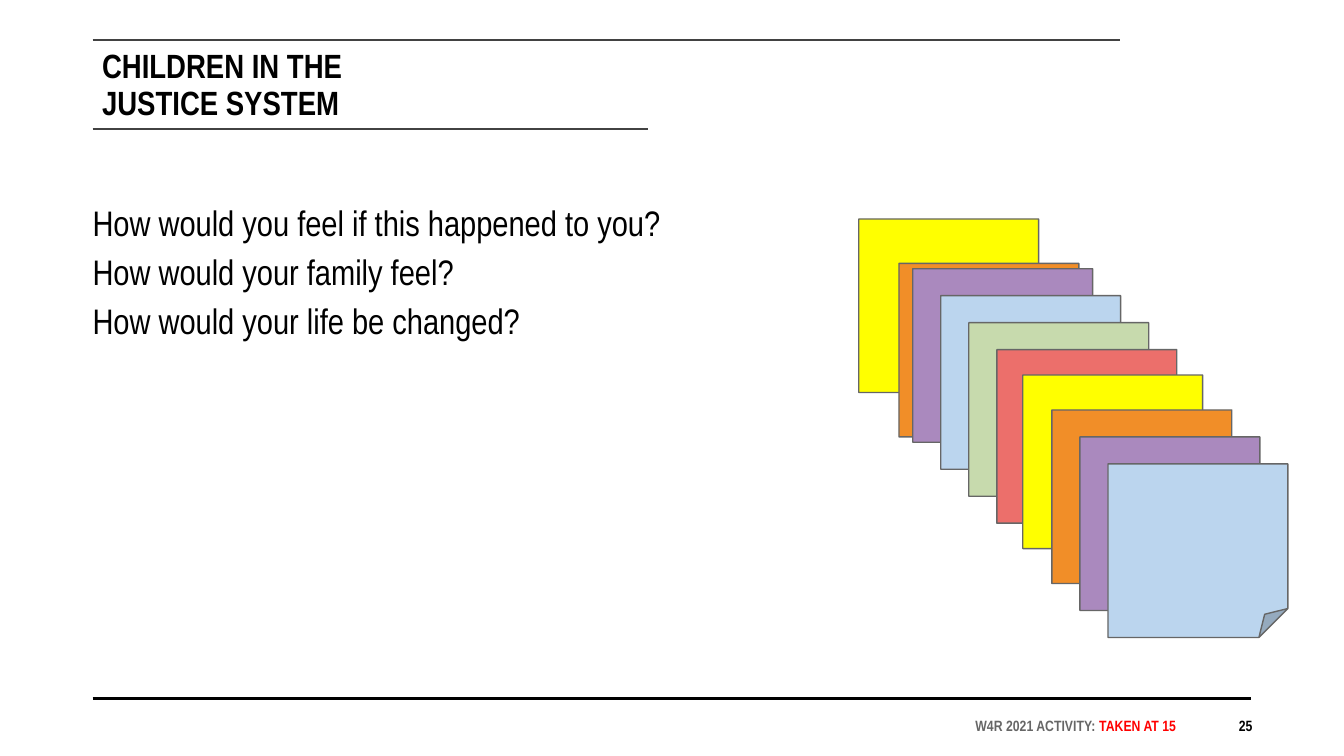
import pptx
import pptx.dml.color
import pptx.enum.shapes
import pptx.enum.text
import pptx.oxml.ns
import pptx.util
from lxml import etree

Cm = pptx.util.Cm
Pt = pptx.util.Pt
Align = pptx.enum.text.PP_ALIGN
Anchor = pptx.enum.text.MSO_ANCHOR

COLORS = {
    "black": "000000", "rule": "424242", "gray": "666666", "red": "FF0000",
    "yellow": "FFFF00", "orange": "F18E28", "purple": "AA89BE",
    "blue": "BBD5EE", "green": "C7DAAD", "coral": "EC6F6B",
}


def rgb(name):
    return pptx.dml.color.RGBColor.from_string(COLORS[name])


def add_text(box, paragraphs, size, bold, frame_format, paragraph_format):
    """Add a text box; each paragraph is a list of (text, colour) runs."""
    frame = slide.shapes.add_textbox(*map(Cm, box)).text_frame
    for attribute, value in frame_format.items():
        setattr(frame, attribute, value)
    for index, runs in enumerate(paragraphs):
        paragraph = frame.paragraphs[0] if index == 0 else frame.add_paragraph()
        for attribute, value in paragraph_format.items():
            setattr(paragraph, attribute, value)
        for text, color in runs:
            if text.startswith("\n"):
                paragraph.add_line_break()
            run = paragraph.add_run()
            run.text = text.lstrip("\n")
            font_format = {"name": "Arial Narrow", "size": Pt(size), "bold": bold}
            for attribute, value in font_format.items():
                setattr(run.font, attribute, value)
            run.font.color.rgb = rgb(color)


presentation = pptx.Presentation()
presentation.slide_width = Cm(25.4)
presentation.slide_height = Cm(14.29)
slide = presentation.slides.add_slide(presentation.slide_layouts[6])

# Rules above the footer and around the title
for left, right, top, color, width in [
    (1.75, 23.65, 13.21, "black", 1.5),
    (1.75, 21.16, 0.76, "rule", 1),
    (1.75, 12.24, 2.44, "rule", 1),
]:
    rule = slide.shapes.add_connector(
        pptx.enum.shapes.MSO_CONNECTOR.STRAIGHT,
        Cm(left), Cm(top), Cm(right), Cm(top))
    rule.line.color.rgb = rgb(color)
    rule.line.width = Pt(width)
    etree.SubElement(rule._element.spPr, pptx.oxml.ns.qn("a:effectLst"))

# Title, questions and footer
flush = {"word_wrap": True, "margin_left": 0, "margin_right": 0,
         "margin_top": 0, "margin_bottom": 0}
title_frame = {**flush, "margin_left": Cm(0.18), "margin_right": Cm(0.18)}
question_frame = {"word_wrap": True, "margin_left": Cm(0.25), "margin_right": Cm(0.25),
                  "margin_top": Cm(0.25), "margin_bottom": Cm(0.25)}
footer_frame = {**flush, "vertical_anchor": Anchor.BOTTOM}

add_text((1.75, 0.94, 8.61, 1.32),
         [[("CHILDREN IN THE", "black"), ("\nJUSTICE SYSTEM", "black")]],
         18, True, title_frame, {"line_spacing": 0.9})

questions = [
    "How would you feel if this happened to you?",
    "How would your family feel?",
    "How would your life be changed?",
]
add_text((1.5, 3.43, 22.86, 9.53), [[(question, "black")] for question in questions],
         19, False, question_frame, {"line_spacing": 1.15})

add_text((14.53, 13.46, 7.7, 0.43),
         [[("W4R 2021 ACTIVITY: ", "gray"), ("TAKEN AT 15", "red")]],
         8, True, footer_frame, {"alignment": Align.RIGHT})
add_text((22.4, 13.61, 1.27, 0.28), [[("25", "black")]],
         8, True, footer_frame, {"alignment": Align.RIGHT})

# Sticky notes: each group steps evenly down to the right
STEP_X, STEP_Y = 0.53, 0.51
for left, top, note_colors in [
    (16.23, 4.14, ["yellow"]),
    (16.99, 4.98, ["orange"]),
    (17.25, 5.08, ["purple", "blue", "green", "coral"]),
    (19.33, 7.09, ["yellow"]),
    (19.88, 7.75, ["orange", "purple", "blue"]),
]:
    for index, color in enumerate(note_colors):
        note = slide.shapes.add_shape(
            pptx.enum.shapes.MSO_SHAPE.FOLDED_CORNER,
            Cm(left + index * STEP_X), Cm(top + index * STEP_Y), Cm(3.4), Cm(3.28))
        note.shadow.inherit = False
        note.fill.solid()
        note.fill.fore_color.rgb = rgb(color)
        note.line.color.rgb = rgb("gray")
        note.line.width = Pt(0.75)

presentation.save("out.pptx")
